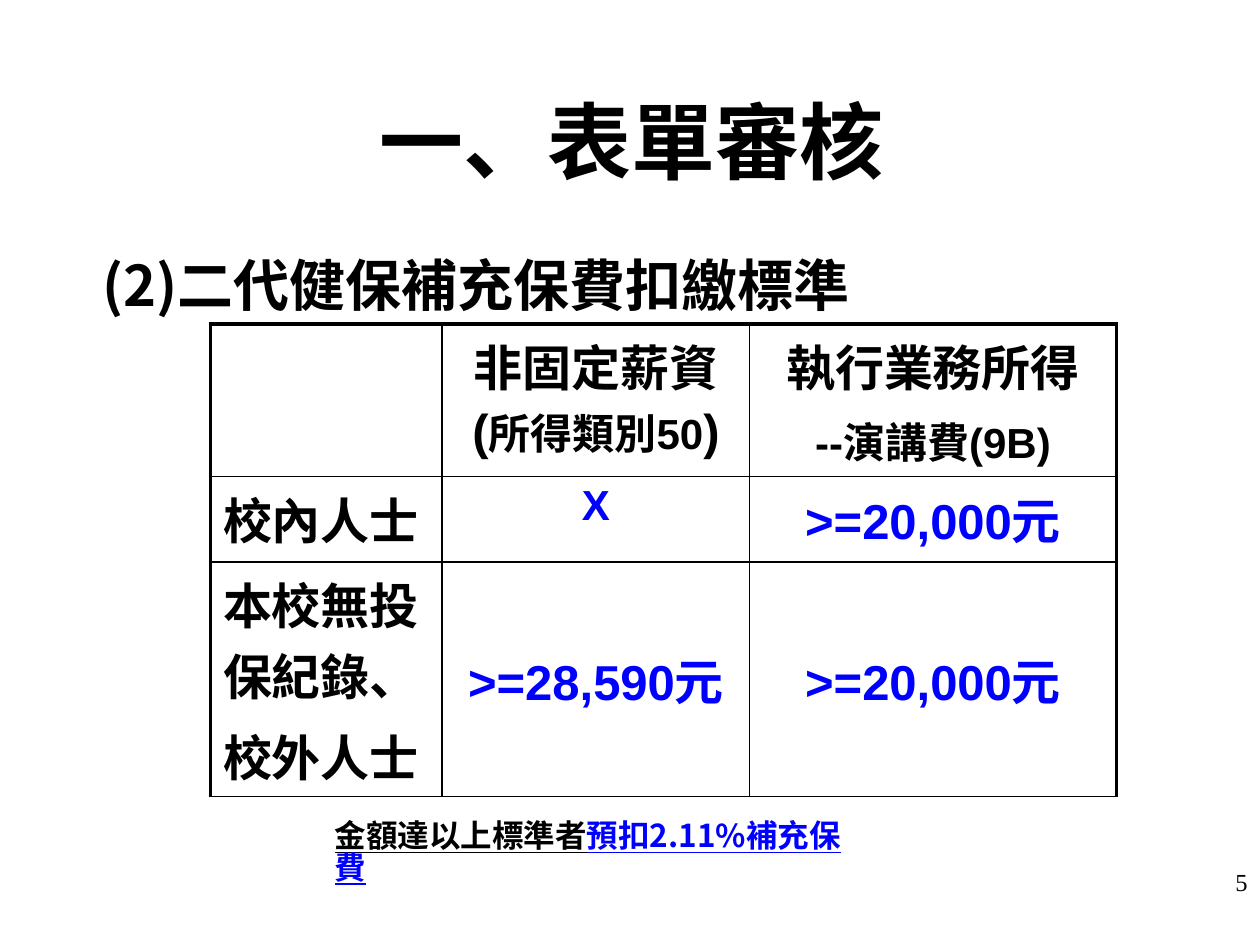
from dataclasses import dataclass

from lxml.etree import SubElement
from pptx import Presentation
from pptx.dml.color import RGBColor
from pptx.enum.text import MSO_ANCHOR, PP_ALIGN
from pptx.oxml.ns import qn
from pptx.util import Inches, Pt


@dataclass(frozen=True)
class Theme:
    black: RGBColor = RGBColor(0, 0, 0)
    blue: RGBColor = RGBColor(0, 0, 255)
    latin: str = "Arial"
    chinese: str = "Noto Sans CJK SC"
    serif: str = "Times New Roman"
    title: int = 48
    heading: int = 32
    cell: int = 28
    detail: int = 24
    note: int = 18
    number: int = 14
    thick: float = 2.25
    thin: float = 1


THEME = Theme()
COLUMN_WIDTHS = (1.84, 2.44, 2.91)
ROW_HEIGHTS = (1.21, 0.68, 1.86)


def black(text, size=THEME.cell):
    return text, size, THEME.black


def blue(text, size=THEME.cell):
    return text, size, THEME.blue


# Each cell is a list of paragraphs; each paragraph is a list of runs.
CELLS = (
    (
        [],
        [[black("非固定薪資 ("), black("所得類別50", THEME.detail), black(")")]],
        [[black("執行業務所得")], [black("--演講費(9B)", THEME.detail)]],
    ),
    (
        [[black("校內人士")]],
        [[blue("X", THEME.detail)]],
        [[blue(">=20,000元")]],
    ),
    (
        [[black("本校無投保紀錄、")], [black("校外人士")]],
        [[blue(">=28,590元")]],
        [[blue(">=20,000元")]],
    ),
)


def place(shape, left, top, width, height):
    shape.left, shape.top = Inches(left), Inches(top)
    shape.width, shape.height = Inches(width), Inches(height)


def add_spans(para, spans, font=THEME.latin, bold=True, underline=None):
    for text, size, color in spans:
        span = para.add_run()
        span.text = text
        span.font.name = font
        span.font.size = Pt(size)
        span.font.bold = bold
        span.font.underline = underline
        span.font.color.rgb = color
        east_asian = SubElement(span.font._element, qn("a:ea"))
        east_asian.set("typeface", THEME.chinese)


def add_title(page):
    title = page.shapes.title
    place(title, 0.51, 0.52, 9, 1.18)
    title.text_frame.vertical_anchor = MSO_ANCHOR.MIDDLE
    para = title.text_frame.paragraphs[0]
    para.alignment = PP_ALIGN.CENTER
    add_spans(para, [black("一、表單審核", THEME.title)])


def add_heading(page):
    body = page.placeholders[1]
    place(body, 0.51, 1.94, 9.15, 5.35)
    para = body.text_frame.paragraphs[0]
    properties = para._p.get_or_add_pPr()
    properties.set("marL", str(Inches(0.2)))
    properties.set("indent", "0")
    SubElement(properties, qn("a:buNone"))
    para.space_before = Pt(0)
    add_spans(para, [black("(2)二代健保補充保費扣繳標準", THEME.heading)], THEME.chinese)


def set_borders(cell, widths):
    """Draw the cell's left, right, top and bottom lines, in that order."""
    properties = cell._tc.get_or_add_tcPr()
    for side, width in zip("LRTB", widths):
        line = SubElement(properties, qn(f"a:ln{side}"), w=str(Pt(width)))
        fill = SubElement(line, qn("a:solidFill"))
        SubElement(fill, qn("a:srgbClr"), val=str(THEME.black))


def fill_cell(cell, paragraphs, alignment):
    for index, spans in enumerate(paragraphs):
        frame = cell.text_frame
        para = frame.add_paragraph() if index else frame.paragraphs[0]
        para.alignment = alignment
        if index:
            para.space_before = Pt(0.2 * spans[0][1])
        add_spans(para, spans)


def add_standards_table(page):
    row_count, column_count = len(ROW_HEIGHTS), len(COLUMN_WIDTHS)
    table = page.shapes.add_table(
        row_count, column_count, Inches(1.67), Inches(2.57),
        Inches(sum(COLUMN_WIDTHS)), Inches(sum(ROW_HEIGHTS)),
    ).table
    table.first_row = table.horz_banding = False
    for column, width in zip(table.columns, COLUMN_WIDTHS):
        column.width = Inches(width)
    for row, height in zip(table.rows, ROW_HEIGHTS):
        row.height = Inches(height)

    for row_index, row in enumerate(CELLS):
        for column_index, paragraphs in enumerate(row):
            cell = table.cell(row_index, column_index)
            first_column = column_index == 0
            last_column = column_index == column_count - 1
            thick_sides = (first_column, last_column, row_index == 0, False)
            set_borders(cell, [THEME.thick if side else THEME.thin for side in thick_sides])
            cell.fill.background()
            if row_index == row_count - 1 and not first_column:
                cell.vertical_anchor = MSO_ANCHOR.MIDDLE
            fill_cell(cell, paragraphs, PP_ALIGN.LEFT if first_column else PP_ALIGN.CENTER)


def add_text_box(page, position, spans, alignment=PP_ALIGN.LEFT, **style):
    box = page.shapes.add_textbox(*map(Inches, position))
    box.text_frame.word_wrap = True
    para = box.text_frame.paragraphs[0]
    para.alignment = alignment
    add_spans(para, spans, **style)
    return para


def main():
    deck = Presentation()
    deck.slide_width, deck.slide_height = Inches(10), Inches(7.5)
    page = deck.slides.add_slide(deck.slide_layouts[1])
    add_title(page)
    add_heading(page)
    add_text_box(
        page, (7.67, 6.83, 2.33, 0.5), [black("5", THEME.number)],
        PP_ALIGN.RIGHT, font=THEME.serif, bold=False,
    )
    add_standards_table(page)
    note = add_text_box(
        page, (2.56, 6.48, 4.37, 0.71),
        [black("金額達以上標準者", THEME.note), blue("預扣2.11%補充保費", THEME.note)],
        font=THEME.chinese, underline=True,
    )
    note.line_spacing = 0.83
    deck.save("out.pptx")


if __name__ == "__main__":
    main()
